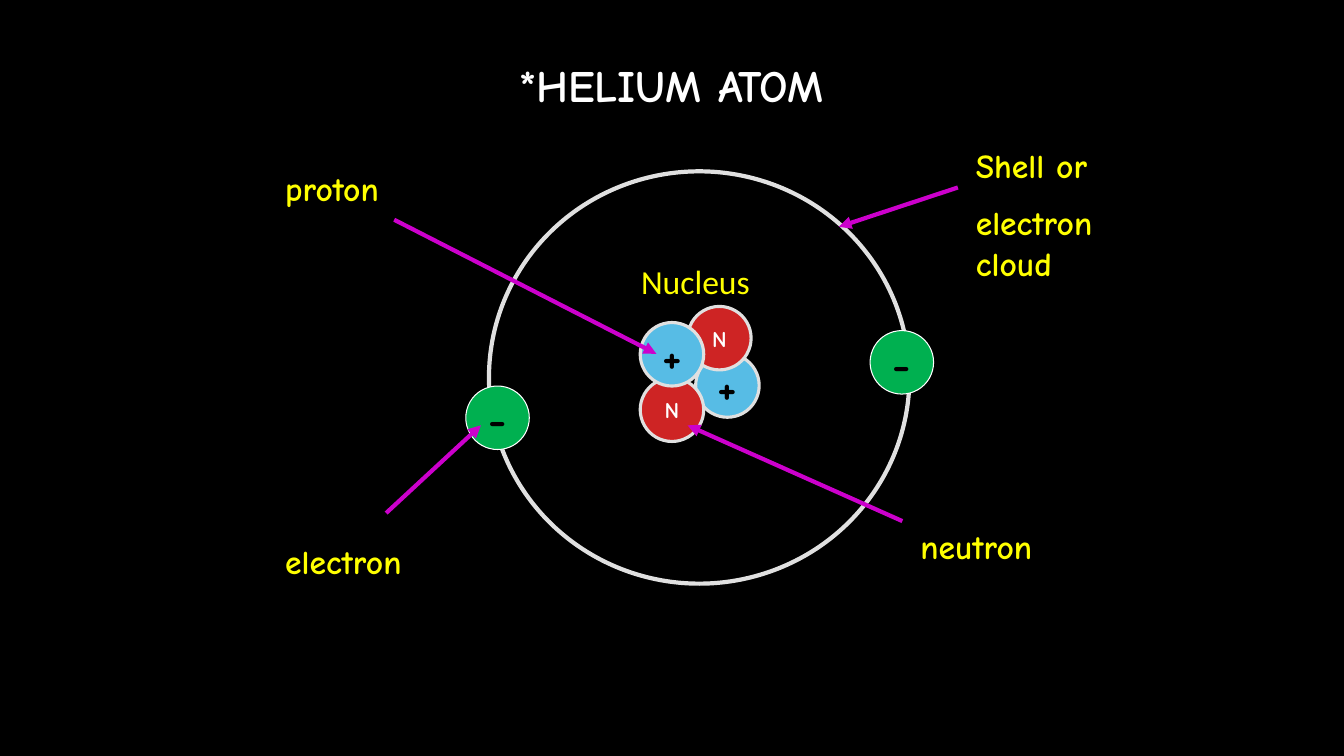
from lxml import etree
from pptx import Presentation
from pptx import util as u
from pptx.dml.color import RGBColor
from pptx.enum import shapes, text
from pptx.oxml.ns import qn

COLOURS = {
    "space": "000000",
    "title": "FFFFFF",
    "label": "FFFF00",
    "pointer": "CC00CC",
    "shell": "E0E0E0",
    "proton": "57BCE5",
    "neutron": "CE2424",
    "electron": "00B050",
}
PARTICLE_SIZE = 0.63
PARTICLES = {
    "proton": {"sign": "+", "size": 32, "ink": "space", "rim": "shell", "rim_width": 2.25},
    "neutron": {"sign": "N", "size": 16, "ink": "title", "rim": "shell", "rim_width": 2.25},
    "electron": {"sign": "-", "size": 32, "ink": "space", "rim": "title", "rim_width": 0.75},
}


class AtomSlide:
    font = "Comic Neue"

    def __init__(self, deck):
        self.slide = deck.slides.add_slide(deck.slide_layouts[6])
        backdrop = self.slide.background.fill
        backdrop.solid()
        backdrop.fore_color.rgb = self.colour("space")

    def colour(self, role):
        return RGBColor.from_string(COLOURS[role])

    def apply(self, target, formats):
        for attribute, value in formats.items():
            setattr(target, attribute, value)

    def add_wording(self, frame, wording, size, ink, align, font=None, bold=True):
        for position, line in enumerate(wording.split("\n")):
            paragraph = frame.paragraphs[0] if position == 0 else frame.add_paragraph()
            paragraph.alignment = align
            if position:
                paragraph.space_before = u.Pt(size / 2)
            run = paragraph.add_run()
            run.text = line
            self.apply(run.font, {"name": font or self.font, "size": u.Pt(size), "bold": bold})
            run.font.color.rgb = self.colour(ink)

    def outline(self, line, role, width):
        line.color.rgb = self.colour(role)
        line.width = u.Pt(width)

    def circle(self, left, top, width, height, rim, rim_width):
        disc = self.slide.shapes.add_shape(
            shapes.MSO_SHAPE.OVAL, *map(u.Inches, (left, top, width, height)))
        disc.shadow.inherit = False
        disc.fill.background()
        self.outline(disc.line, rim, rim_width)
        return disc

    def particle(self, kind, left, top):
        style = PARTICLES[kind]
        disc = self.circle(left, top, PARTICLE_SIZE, PARTICLE_SIZE,
                           style["rim"], style["rim_width"])
        disc.fill.solid()
        disc.fill.fore_color.rgb = self.colour(kind)
        self.apply(disc.text_frame, {
            "word_wrap": False, "vertical_anchor": text.MSO_ANCHOR.MIDDLE})
        self.add_wording(disc.text_frame, style["sign"], style["size"], style["ink"],
                         text.PP_ALIGN.CENTER)

    def label(self, wording, left, top, width, height=0.5, size=24, ink="label",
              align=text.PP_ALIGN.LEFT, **face):
        box = self.slide.shapes.add_textbox(*map(u.Inches, (left, top, width, height)))
        self.apply(box.text_frame, {
            "word_wrap": True, "auto_size": text.MSO_AUTO_SIZE.SHAPE_TO_FIT_TEXT})
        self.add_wording(box.text_frame, wording, size, ink, align, **face)

    def pointer(self, start, end):
        arrow = self.slide.shapes.add_connector(
            shapes.MSO_CONNECTOR.STRAIGHT, *map(u.Inches, (*start, *end)))
        self.outline(arrow.line, "pointer", 3)
        etree.SubElement(arrow.get_or_add_ln(), qn("a:tailEnd"), type="triangle")
        etree.SubElement(arrow.element.spPr, qn("a:effectLst"))


def main():
    deck = Presentation()
    deck.slide_width, deck.slide_height = u.Inches(13.33), u.Inches(7.5)
    atom = AtomSlide(deck)

    atom.circle(4.85, 1.7, 4.17, 4.09, "shell", 3)
    atom.label("*HELIUM ATOM", 1.66, 0.52, 10, 0.63, size=32, ink="title",
               align=text.PP_ALIGN.CENTER)

    for kind, left, top in (
        ("proton", 6.9, 3.51),
        ("neutron", 6.82, 3.04),
        ("neutron", 6.35, 3.75),
        ("proton", 6.35, 3.2),
        ("electron", 4.62, 3.83),
        ("electron", 8.63, 3.28),
    ):
        atom.particle(kind, left, top)

    for wording, box, start, end in (
        ("proton", (2.73, 1.62, 1.34), (3.91, 2.18), (6.51, 3.51)),
        ("electron", (2.73, 5.32, 1.58), (3.83, 5.09), (4.77, 4.22)),
        ("neutron", (9.03, 5.17, 1.81), (8.95, 5.17), (6.82, 4.22)),
        ("Shell or\nelectron cloud", (9.58, 1.39, 1.59, 1.51), (9.5, 1.86), (8.32, 2.25)),
    ):
        atom.label(wording, *box)
        atom.pointer(start, end)

    atom.label("Nucleus", 6.26, 2.54, 1.37, font="Calibri", bold=False)
    deck.save("out.pptx")


if __name__ == "__main__":
    main()
